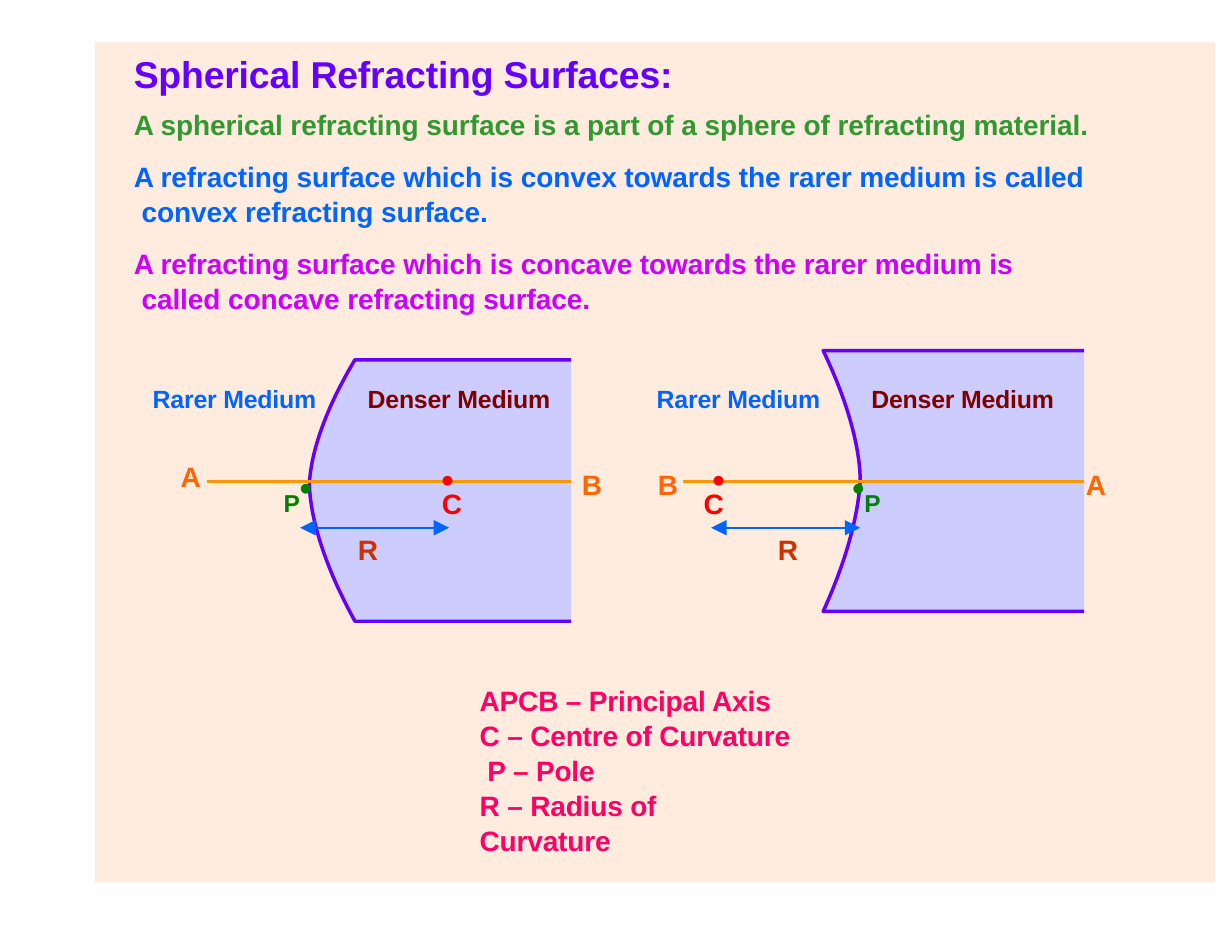
from lxml.etree import SubElement
from pptx import Presentation
from pptx.dml.color import RGBColor
from pptx.enum.shapes import MSO_CONNECTOR, MSO_SHAPE
from pptx.enum.text import MSO_ANCHOR, MSO_AUTO_SIZE, PP_ALIGN
from pptx.oxml.ns import qn
from pptx.util import Pt

PEACH = RGBColor(0xFF, 0xEC, 0xDF)
LAVENDER = RGBColor(0xCC, 0xCC, 0xFF)
VIOLET = RGBColor(0x65, 0x00, 0xFF)
GRASS = RGBColor(0x32, 0x99, 0x32)
BLUE = RGBColor(0x00, 0x65, 0xFF)
MAGENTA = RGBColor(0xCC, 0x00, 0xFF)
AMBER = RGBColor(0xFF, 0x98, 0x00)
ORANGE = RGBColor(0xFF, 0x65, 0x00)
RED = RGBColor(0xFF, 0x00, 0x00)
RUST = RGBColor(0xCC, 0x32, 0x00)
GREEN = RGBColor(0x00, 0x7F, 0x00)
MAROON = RGBColor(0x7F, 0x00, 0x00)
PINK = RGBColor(0xFF, 0x00, 0x65)


def set_frame(box, left, top, width, height, top_inset=1):
    """Place a text shape and return its text frame, set up for this slide."""
    box.left, box.top, box.width, box.height = Pt(left), Pt(top), Pt(width), Pt(height)
    frame = box.text_frame
    frame.word_wrap = True
    frame.auto_size = MSO_AUTO_SIZE.NONE
    frame.vertical_anchor = MSO_ANCHOR.TOP
    frame.margin_left, frame.margin_top = Pt(1), Pt(top_inset)
    frame.margin_right = frame.margin_bottom = 0
    return frame


def add_run(paragraph, text, size, color, spacing=-0.1, baseline=0):
    run = paragraph.add_run()
    run.text = text
    run.font.name, run.font.size, run.font.bold = "Arial", Pt(size), True
    run.font.color.rgb = color
    properties = run.font._element
    properties.set("spc", str(round(spacing * 100)))
    if baseline:
        properties.set("baseline", str(baseline * 1000))


presentation = Presentation()
presentation.slide_width, presentation.slide_height = Pt(792), Pt(612)
slide = presentation.slides.add_slide(presentation.slide_layouts[1])
shapes = slide.shapes
title, definitions = shapes.title, slide.placeholders[1]

# Peach panel behind everything
panel = shapes.add_shape(MSO_SHAPE.RECTANGLE, Pt(61.2), Pt(27.3), Pt(720), Pt(540))
panel.fill.solid()
panel.fill.fore_color.rgb = PEACH
panel.line.fill.background()
panel.shadow.inherit = False
title._element.addprevious(panel._element)

# Title
heading = set_frame(title, 85, 31.7, 352, 31).paragraphs[0]
heading.alignment = PP_ALIGN.LEFT
add_run(heading, "Spherical Refracting Surfaces:", 24, VIOLET)

# Definitions, with wrapped lines slightly indented
frame = set_frame(definitions, 85, 56.2, 620, 142.6, top_inset=11.5)
for number, (text, color) in enumerate([
    ("A spherical refracting surface is a part of a sphere of refracting material.", GRASS),
    ("A refracting surface which is convex towards the rarer medium is called "
     "convex refracting surface.", BLUE),
    ("A refracting surface which is concave towards the rarer medium is "
     "called concave refracting surface.", MAGENTA),
]):
    paragraph = frame.add_paragraph() if number else frame.paragraphs[0]
    paragraph.line_spacing = 1.05
    paragraph.space_before = Pt(10.8 if number else 0)
    properties = paragraph._p.get_or_add_pPr()
    properties.set("marL", str(Pt(5)))
    properties.set("indent", str(-Pt(5)))
    SubElement(properties, qn("a:buNone"))
    add_run(paragraph, text, 18, color, -0.05)

# Refracting surfaces: pole x, rim x, right edge, top, pole y, bottom
CURVE_STEPS = 20
for pole_x, rim_x, right, top, pole_y, bottom in [
    (198.9, 228.2, 367.2, 231.3, 311.8, 399.4),
    (553, 529.2, 697, 225.4, 307, 393.1),
]:
    outline = [(right, top)]
    for step in range(-CURVE_STEPS, CURVE_STEPS + 1):
        reach = abs(step) / CURVE_STEPS
        rim_y = top if step < 0 else bottom
        outline.append((pole_x + (rim_x - pole_x) * reach ** 1.65,
                        pole_y + (rim_y - pole_y) * reach))
    outline.append((right, bottom))
    points = [(Pt(x), Pt(y)) for x, y in outline]

    for is_medium in (True, False):
        builder = shapes.build_freeform(*points[0])
        builder.add_line_segments(points[1:], close=is_medium)
        surface = builder.convert_to_shape()
        surface.shadow.inherit = False
        if is_medium:
            surface.fill.solid()
            surface.fill.fore_color.rgb = LAVENDER
            surface.line.fill.background()
        else:
            surface.fill.background()
            surface.line.color.rgb = VIOLET
            surface.line.width = Pt(2.25)

# Principal axes and radius arrows
for start, end, y, color, width, is_radius in [
    (133.2, 367.2, 309.6, AMBER, 2.25, False),
    (439.2, 697, 309.6, AMBER, 2.25, False),
    (193, 288.7, 339.3, BLUE, 1.25, True),
    (457.2, 553, 339.3, BLUE, 1.25, True),
]:
    axis = shapes.add_connector(MSO_CONNECTOR.STRAIGHT, Pt(start), Pt(y), Pt(end), Pt(y))
    axis.line.color.rgb = color
    axis.line.width = Pt(width)
    if is_radius:
        for tip in ("a:headEnd", "a:tailEnd"):
            SubElement(axis.line._get_or_add_ln(), qn(tip), type="triangle", w="lg", len="lg")
    SubElement(axis._element.spPr, qn("a:effectLst"))

# Labels: text, left, top, width, height, size, colour
for text, left, top, width, height, size, color in [
    ("Rarer Medium", 97.2, 245.5, 109, 21, 16, BLUE),
    ("Rarer Medium", 421.2, 245.5, 109, 21, 16, BLUE),
    ("Denser Medium", 235.4, 245.5, 121, 21, 16, MAROON),
    ("Denser Medium", 559.2, 245.5, 137, 21, 16, MAROON),
    ("•", 283, 293.8, 9.4, 28, 22, RED),
    ("•", 457.2, 293.8, 9.4, 28, 22, RED),
    ("C", 283, 311.8, 15.1, 24, 18, RED),
    ("C", 451.4, 311.8, 15.1, 24, 18, RED),
    ("R", 229, 341.3, 15.1, 24, 18, RUST),
    ("R", 499, 341.3, 15.1, 24, 18, RUST),
    ("A", 115.2, 294.5, 15.1, 24, 18, ORANGE),
    ("A", 697, 299.5, 15.1, 24, 18, ORANGE),
    ("B", 373, 299.5, 15.1, 24, 18, ORANGE),
    ("B", 422, 299.5, 15.1, 24, 18, ORANGE),
]:
    label = set_frame(shapes.add_textbox(0, 0, 0, 0), left, top, width, height)
    add_run(label.paragraphs[0], text, size, color)

# Poles: a dot with a lowered P beside it
for left, parts in [
    (181.3, [("P", 27, -0.1, -29), ("•", 22, -0.1, 0)]),
    (547, [("•", 22, -0.9, 0), ("P", 27, -1.4, -29)]),
]:
    pole = set_frame(shapes.add_textbox(0, 0, 0, 0), left, 293.8, 26, 28)
    for text, size, spacing, baseline in parts:
        add_run(pole.paragraphs[0], text, size, GREEN, spacing, baseline)

# Legend
legend = set_frame(shapes.add_textbox(0, 0, 0, 0), 307.4, 437.8, 207, 109)
for number, (lines, indent) in enumerate([
    (["APCB – Principal Axis"], 0),
    (["C – Centre of Curvature"], 0),
    (["P – Pole"], 5),
    (["R – Radius of", "Curvature"], 0),
]):
    paragraph = legend.add_paragraph() if number else legend.paragraphs[0]
    paragraph.line_spacing = 1.04
    paragraph._p.get_or_add_pPr().set("marL", str(Pt(indent)))
    for position, line in enumerate(lines):
        if position:
            paragraph.add_line_break()
        add_run(paragraph, line, 18, PINK)

presentation.save("out.pptx")
